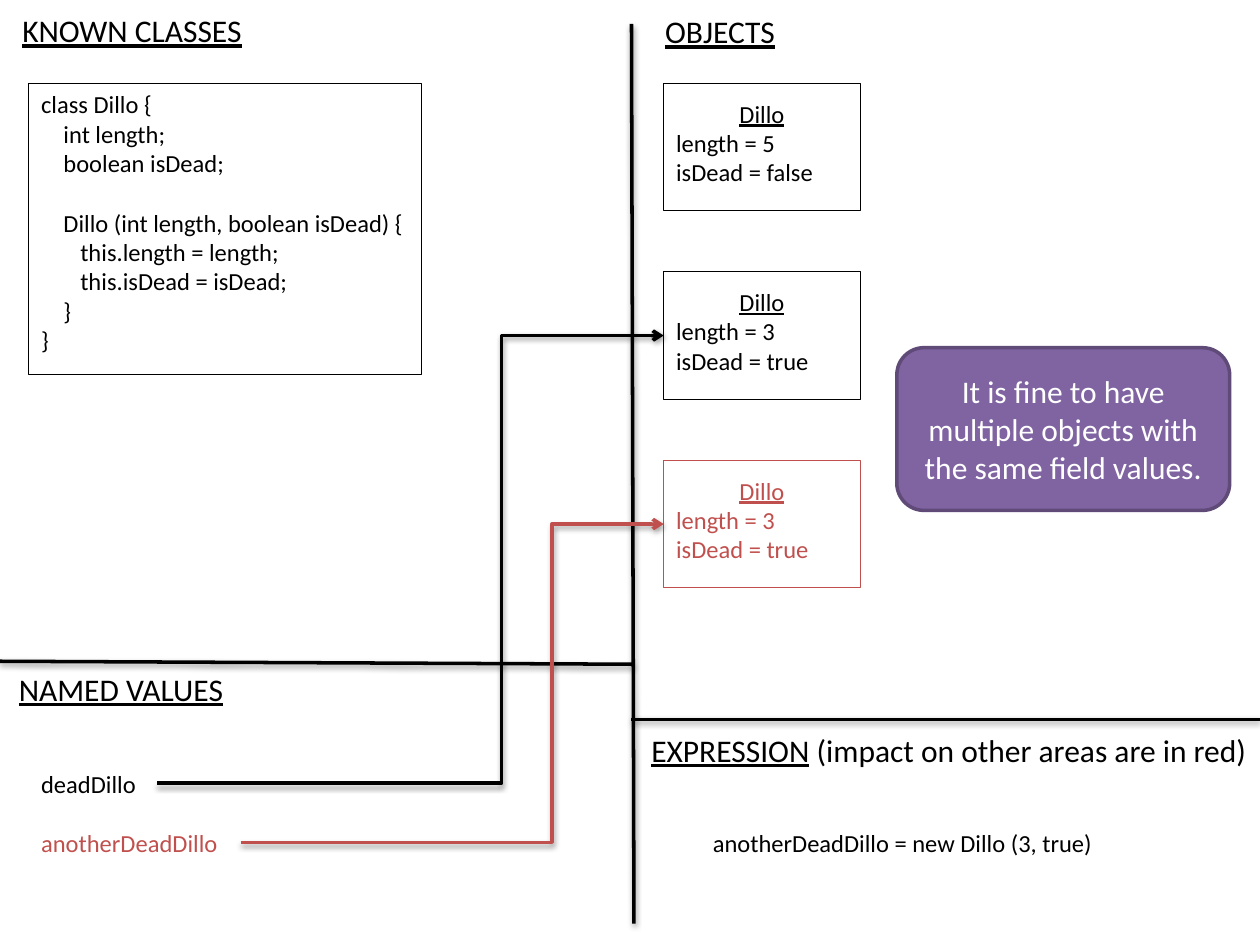
import pptx
import pptx.dml.color
import pptx.enum.shapes
import pptx.enum.text
import pptx.oxml
import pptx.oxml.ns
import pptx.util

Cm = pptx.util.Cm
SHAPES = pptx.enum.shapes.MSO_SHAPE
LINES = pptx.enum.shapes.MSO_CONNECTOR
ALIGN = pptx.enum.text.PP_ALIGN
ANCHOR = pptx.enum.text.MSO_ANCHOR

BLACK, RED, WHITE = "000000", "C0504D", "FFFFFF"
PURPLE, DARK_PURPLE = "8064A2", "5F4A78"
TOP, LEFT, BOTTOM, RIGHT = range(4)

SHADOW = (
    '<a:effectLst {}><a:outerShdw blurRad="40000" dist="20000" dir="5400000" rotWithShape="0">'
    '<a:srgbClr val="000000"><a:alpha val="38000"/></a:srgbClr></a:outerShdw></a:effectLst>'
).format(pptx.oxml.ns.nsdecls("a"))

CODE = [
    ("class Dillo {", 0, 0),
    ("int length;", 0.45, 0),
    ("boolean isDead;", 0.45, 0),
    ("Dillo (int length, boolean isDead) {", 0.45, 17),
    ("this.length = length;", 0.79, 0),
    ("this.isDead = isDead;", 0.79, 0),
    ("}", 0.45, 0),
    ("}", 0, 0),
]
OBJECTS = [("5", "false", BLACK), ("3", "true", BLACK), ("3", "true", RED)]


def rgb(color):
    return pptx.dml.color.RGBColor.from_string(color)


def write(frame, text, size=14, color=BLACK, underline=False, align=ALIGN.LEFT,
          indent=0, before=0, same_line=False):
    para = frame.paragraphs[-1]
    if para.runs and not same_line:
        para = frame.add_paragraph()
    para.alignment = align
    para.space_before = pptx.util.Pt(before)
    if indent:
        properties = para._p.get_or_add_pPr()
        properties.set("marL", str(Cm(indent)))
        properties.set("indent", "0")
    span = para.add_run()
    span.text = text
    span.font.name = "Calibri"
    span.font.size = pptx.util.Pt(size)
    span.font.underline = underline
    span.font.color.rgb = rgb(color)


def add_text_box(page, left, top, width, height, anchor=ANCHOR.MIDDLE, wrap=True):
    box = page.shapes.add_textbox(Cm(left), Cm(top), Cm(width), Cm(height))
    box.text_frame.word_wrap = wrap
    box.text_frame.vertical_anchor = anchor
    return box


def add_heading(page, text, left, top, width):
    box = add_text_box(page, left, top, width, 1.03, ANCHOR.TOP, wrap=False)
    write(box.text_frame, text, size=18, underline=True)
    return box


def add_label(page, text, top, width, color):
    box = add_text_box(page, 0.58, top, width, 1.2)
    write(box.text_frame, text, color=color)
    return box


def add_box(page, left, top, width, height, kind=SHAPES.RECTANGLE, line=BLACK,
            weight=0.5, fill=None, anchor=ANCHOR.MIDDLE):
    box = page.shapes.add_shape(kind, Cm(left), Cm(top), Cm(width), Cm(height))
    box.shadow.inherit = False
    if fill:
        box.fill.solid()
        box.fill.fore_color.rgb = rgb(fill)
    else:
        box.fill.background()
    box.line.color.rgb = rgb(line)
    box.line.width = pptx.util.Pt(weight)
    box.text_frame.word_wrap = True
    box.text_frame.vertical_anchor = anchor
    return box


def add_object(page, top, length, is_dead, color):
    box = add_box(page, 13.38, top, 3.96, 2.57, line=color)
    frame = box.text_frame
    frame.margin_bottom = Cm(0.3)
    write(frame, "Dillo", color=color, underline=True, align=ALIGN.CENTER)
    write(frame, f"length = {length}", color=color)
    write(frame, f"isDead = {is_dead}", color=color)
    return box


def add_line(page, points, color=BLACK, kind=LINES.STRAIGHT):
    line = page.shapes.add_connector(kind, *[Cm(value) for value in points])
    line.line.color.rgb = rgb(color)
    line.line.width = pptx.util.Pt(2)
    line._element.spPr.append(pptx.oxml.parse_xml(SHADOW))
    return line


def add_reference(page, label, target, bend, color):
    arrow = add_line(page, (0, 0, 1, 1), color, LINES.ELBOW)
    arrow.begin_connect(label, RIGHT)
    arrow.end_connect(target, LEFT)
    share = (Cm(bend) - arrow.begin_x) / (arrow.end_x - arrow.begin_x)
    namespace = pptx.oxml.ns.nsdecls("a")
    guides = arrow._element.spPr.prstGeom.get_or_add_avLst()
    guides.append(pptx.oxml.parse_xml(
        f'<a:gd {namespace} name="adj1" fmla="val {round(share * 100000)}"/>'))
    arrow.line._get_or_add_ln().append(
        pptx.oxml.parse_xml(f'<a:tailEnd {namespace} type="arrow"/>'))


def main():
    deck = pptx.Presentation()
    deck.slide_width, deck.slide_height = Cm(25.4), Cm(19.05)
    page = deck.slides.add_slide(deck.slide_layouts[6])

    add_heading(page, "KNOWN CLASSES", 0.2, 0.1, 5)
    add_heading(page, "OBJECTS", 13.16, 0.12, 2.77)
    add_heading(page, "NAMED VALUES", 0.13, 13.38, 4.72)
    for points in [(12.73, 0.48, 12.78, 18.62), (0, 13.33, 12.78, 13.39),
                   (12.73, 14.5, 25.4, 14.5)]:
        add_line(page, points)

    expression = add_heading(page, "EXPRESSION", 12.88, 14.61, 12.65)
    write(expression.text_frame, " (impact on other areas are in red)", size=18, same_line=True)
    statement = add_text_box(page, 14.12, 15.62, 8.94, 2.92)
    statement.text_frame.margin_bottom = Cm(0.3)
    write(statement.text_frame, "anotherDeadDillo = new Dillo (3, true)")

    code = add_box(page, 0.58, 1.68, 7.92, 5.87, anchor=ANCHOR.TOP)
    for text, indent, before in CODE:
        write(code.text_frame, text, indent=indent, before=before)

    cards = [add_object(page, 1.68 + 3.8 * row, *values) for row, values in enumerate(OBJECTS)]
    dead = add_label(page, "deadDillo", 15.19, 2.59, BLACK)
    another = add_label(page, "anotherDeadDillo", 16.38, 4.27, RED)
    add_reference(page, dead, cards[1], 10.11, BLACK)
    add_reference(page, another, cards[2], 11.13, RED)

    note = add_box(page, 18.08, 7.01, 6.71, 3.28, SHAPES.ROUNDED_RECTANGLE,
                   line=DARK_PURPLE, weight=2, fill=PURPLE)
    write(note.text_frame, "It is fine to have multiple objects with the same field values.",
          size=18, color=WHITE, align=ALIGN.CENTER)

    deck.save("out.pptx")


if __name__ == "__main__":
    main()
